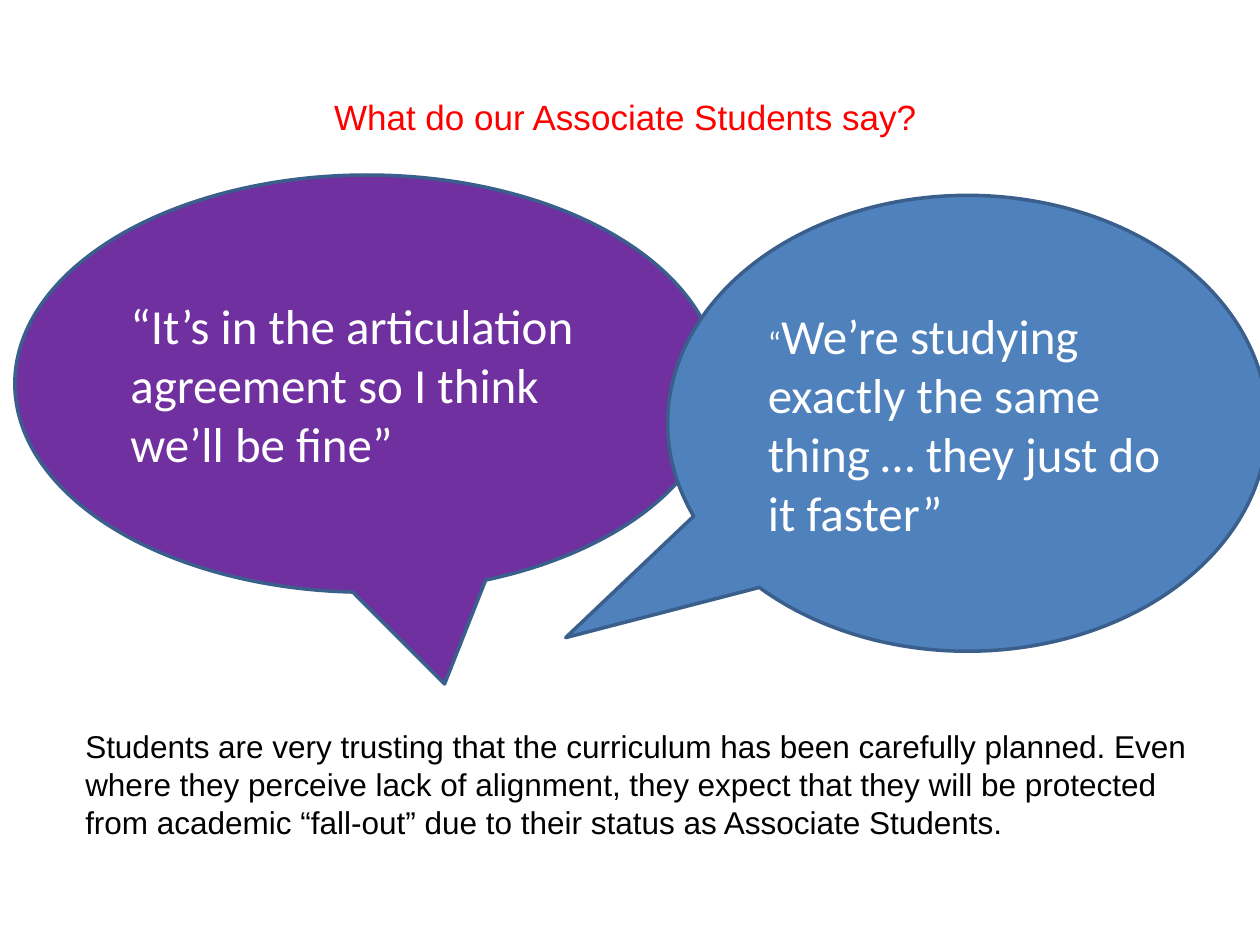
from dataclasses import dataclass

from pptx import Presentation
from pptx.dml.color import RGBColor
from pptx.enum.shapes import MSO_SHAPE
from pptx.enum.text import MSO_ANCHOR, PP_ALIGN
from pptx.shapes.autoshape import Shape
from pptx.slide import Slide
from pptx.util import Cm, Pt

CALLOUT = MSO_SHAPE.OVAL_CALLOUT
TOP, MIDDLE = MSO_ANCHOR.TOP, MSO_ANCHOR.MIDDLE
LEFT, CENTER = PP_ALIGN.LEFT, PP_ALIGN.CENTER
OUTLINE = "3A5F8C"
WHITE = "FFFFFF"
BLANK_LAYOUT = 6


@dataclass(frozen=True)
class Box:
    left: float
    top: float
    width: float
    height: float

    def lengths(self) -> tuple[Cm, Cm, Cm, Cm]:
        return Cm(self.left), Cm(self.top), Cm(self.width), Cm(self.height)


@dataclass(frozen=True)
class Wording:
    runs: tuple[tuple[str, int], ...]
    font: str
    color: str
    align: PP_ALIGN = LEFT
    anchor: MSO_ANCHOR = MIDDLE


@dataclass(frozen=True)
class Label:
    box: Box
    wording: Wording


@dataclass(frozen=True)
class Bubble:
    box: Box
    tip: tuple[float, float]
    fill: str
    runs: tuple[tuple[str, int], ...]


LABELS = (
    Label(
        Box(0.71, 0.76, 23.8, 3.18),
        Wording((("What do our Associate Students say?", 20),), "Arial", "FF0000", CENTER),
    ),
    Label(
        Box(1.47, 14.53, 22.86, 4.19),
        Wording(
            ((
                "Students are very trusting that the curriculum has been carefully planned. "
                "Even where they perceive lack of alignment, they expect that they will be "
                "protected from academic “fall-out” due to their status as Associate Students.",
                18,
            ),),
            "Arial", "000000", anchor=TOP,
        ),
    ),
)

BUBBLES = (
    Bubble(
        Box(0.3, 3.53, 14.2, 8.41), (0.11, 0.72), "7030A0",
        (("“It’s in the articulation agreement so I think we’ll be fine”", 28),),
    ),
    Bubble(
        Box(13.46, 3.94, 12.09, 9.19), (-0.67, 0.47), "4F81BD",
        (("“", 18), ("We’re studying exactly the same thing … they just do it faster”", 28)),
    ),
)


def rgb(color: str) -> RGBColor:
    return RGBColor.from_string(color)


def write_text(shape: Shape, wording: Wording) -> None:
    frame = shape.text_frame
    frame.word_wrap = True
    frame.vertical_anchor = wording.anchor
    paragraph = frame.paragraphs[0]
    paragraph.alignment = wording.align
    for text, size in wording.runs:
        run = paragraph.add_run()
        run.text = text
        formats = {"name": wording.font, "size": Pt(size)}
        for attribute, value in formats.items():
            setattr(run.font, attribute, value)
        run.font.color.rgb = rgb(wording.color)


def draw_label(slide: Slide, label: Label) -> None:
    write_text(slide.shapes.add_textbox(*label.box.lengths()), label.wording)


def draw_bubble(slide: Slide, bubble: Bubble) -> None:
    shape = slide.shapes.add_shape(CALLOUT, *bubble.box.lengths())
    shape.shadow.inherit = False
    for index, offset in enumerate(bubble.tip):
        shape.adjustments[index] = offset
    shape.fill.solid()
    shape.fill.fore_color.rgb = rgb(bubble.fill)
    shape.line.color.rgb = rgb(OUTLINE)
    shape.line.width = Pt(2)
    write_text(shape, Wording(bubble.runs, "Calibri", WHITE))


def main() -> None:
    presentation = Presentation()
    presentation.slide_width = Cm(25.4)
    presentation.slide_height = Cm(19.05)
    slide = presentation.slides.add_slide(presentation.slide_layouts[BLANK_LAYOUT])
    for label in LABELS:
        draw_label(slide, label)
    for bubble in BUBBLES:
        draw_bubble(slide, bubble)
    presentation.save("out.pptx")


if __name__ == "__main__":
    main()
